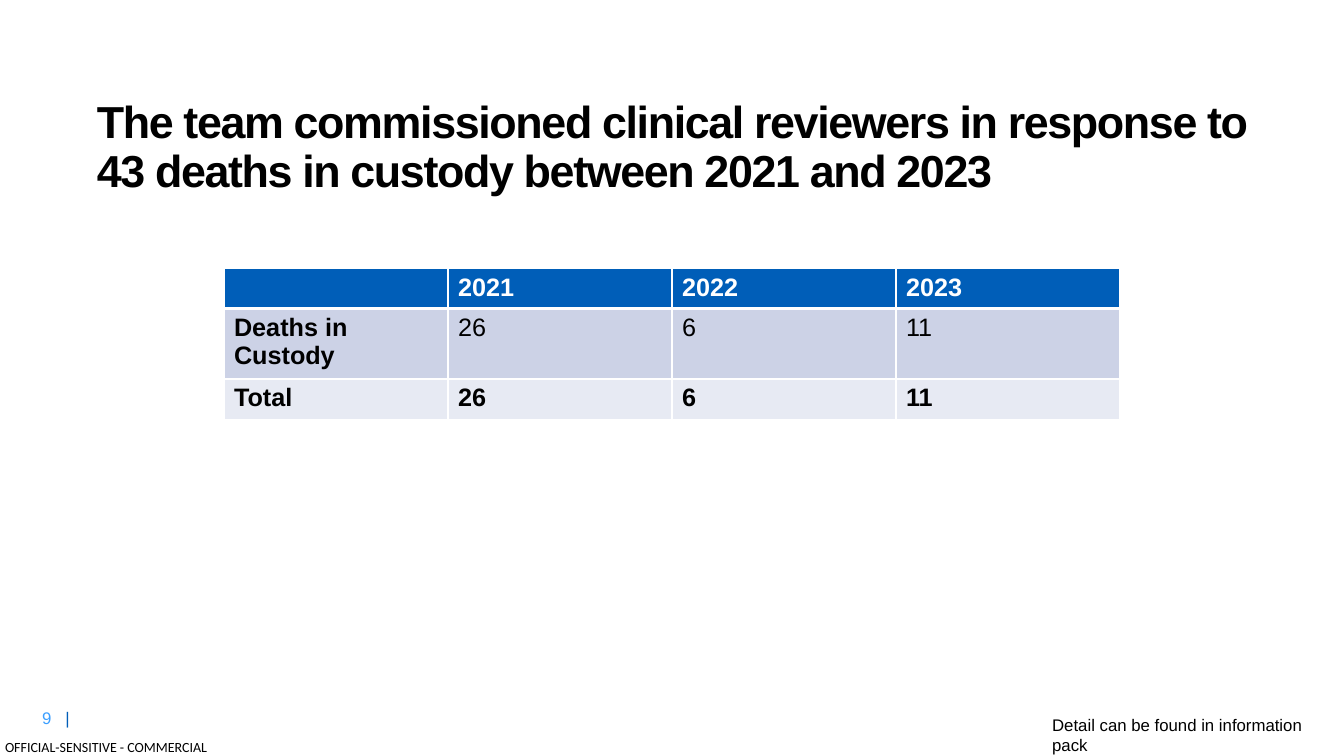
from pptx import Presentation
from pptx.dml.color import RGBColor
from pptx.enum.text import MSO_ANCHOR, MSO_AUTO_SIZE, PP_ALIGN
from pptx.oxml.ns import qn
from pptx.util import Pt
from lxml.etree import SubElement

BLACK = RGBColor(0x00, 0x00, 0x00)
WHITE = RGBColor(0xFF, 0xFF, 0xFF)
BLUE = RGBColor(0x00, 0x5E, 0xB8)
LIGHT_BLUE = RGBColor(0x3B, 0x9F, 0xFF)
BAND_DARK = RGBColor(0xCC, 0xD2, 0xE6)
BAND_LIGHT = RGBColor(0xE7, 0xEA, 0xF3)

TITLE = ("The team commissioned clinical reviewers in response to "
         "43 deaths in custody between 2021 and 2023")
DEATHS = [
    ["", "2021", "2022", "2023"],
    ["Deaths in Custody", "26", "6", "11"],
    ["Total", "26", "6", "11"],
]
ROW_FILLS = [BLUE, BAND_DARK, BAND_LIGHT]
ROW_SHARES = [0.27, 0.47, 0.26]


def style(span, size, color, bold=False, name="Arial"):
    span.font.size = Pt(size)
    span.font.name = name
    span.font.bold = bold
    span.font.color.rgb = color


def place(shape, box):
    shape.left, shape.top, shape.width, shape.height = (Pt(length) for length in box)


def add_title(page, box):
    title = page.shapes.title
    place(title, box)
    frame = title.text_frame
    frame.text = TITLE
    frame.word_wrap = True
    frame.auto_size = MSO_AUTO_SIZE.NONE
    frame.vertical_anchor = MSO_ANCHOR.MIDDLE
    para = frame.paragraphs[0]
    para.alignment = PP_ALIGN.LEFT
    para.line_spacing = 0.9
    span = para.runs[0]
    style(span, 32, BLACK, bold=True)
    span.font._element.set("spc", "-100")


def add_label(page, box, text, size, name="Arial", inset=True):
    label = page.shapes.add_textbox(*(Pt(length) for length in box))
    frame = label.text_frame
    frame.word_wrap = True
    if not inset:
        frame.margin_left = frame.margin_right = 0
        frame.margin_top = frame.margin_bottom = 0
    frame.text = text
    style(frame.paragraphs[0].runs[0], size, BLACK, name=name)


def add_page_number(page, box):
    number = page.shapes.add_textbox(*(Pt(length) for length in box))
    para = number.text_frame.paragraphs[0]
    tabs = SubElement(para._p.get_or_add_pPr(), qn("a:tabLst"))
    SubElement(tabs, qn("a:tab"), pos=str(Pt(16.7)), algn="l")
    for text, color in (("9\t", LIGHT_BLUE), ("|", BLUE)):
        span = para.add_run()
        span.text = text
        style(span, 12, color)


def add_borders(cell, top, bottom):
    properties = cell._tc.get_or_add_tcPr()
    for side, width in (("L", 1), ("R", 1), ("T", top), ("B", bottom)):
        line = SubElement(properties, qn(f"a:ln{side}"), w=str(Pt(width)))
        fill = SubElement(line, qn("a:solidFill"))
        SubElement(fill, qn("a:srgbClr"), val=str(WHITE))


def add_deaths_table(page, box):
    left, top, width, height = (Pt(length) for length in box)
    table = page.shapes.add_table(len(DEATHS), len(DEATHS[0]), left, top, width, height).table
    for row, share in zip(table.rows, ROW_SHARES):
        row.height = int(height * share)
    for row_index, values in enumerate(DEATHS):
        for column_index, value in enumerate(values):
            cell = table.cell(row_index, column_index)
            add_borders(cell, 3 if row_index == 1 else 1, 3 if row_index == 0 else 1)
            cell.fill.solid()
            cell.fill.fore_color.rgb = ROW_FILLS[row_index]
            cell.text = value
            para = cell.text_frame.paragraphs[0]
            para.font.size = Pt(18)
            for span in para.runs:
                style(span, 18, WHITE if row_index == 0 else BLACK,
                      bold=row_index != 1 or column_index == 0)


def main():
    deck = Presentation()
    deck.slide_width, deck.slide_height = Pt(960), Pt(540)
    page = deck.slides.add_slide(deck.slide_layouts[5])
    add_label(page, (3.6, 527.8, 147, 12.2), "OFFICIAL-SENSITIVE - COMMERCIAL", 10,
              name="Calibri", inset=False)
    add_page_number(page, (23, 501.8, 51, 21.6))
    add_title(page, (62, 82, 838, 48.2))
    add_deaths_table(page, (160, 191.5, 640, 102))
    add_label(page, (744.5, 507, 208, 21.6), "Detail can be found in information pack", 12)
    deck.save("out.pptx")


if __name__ == "__main__":
    main()
